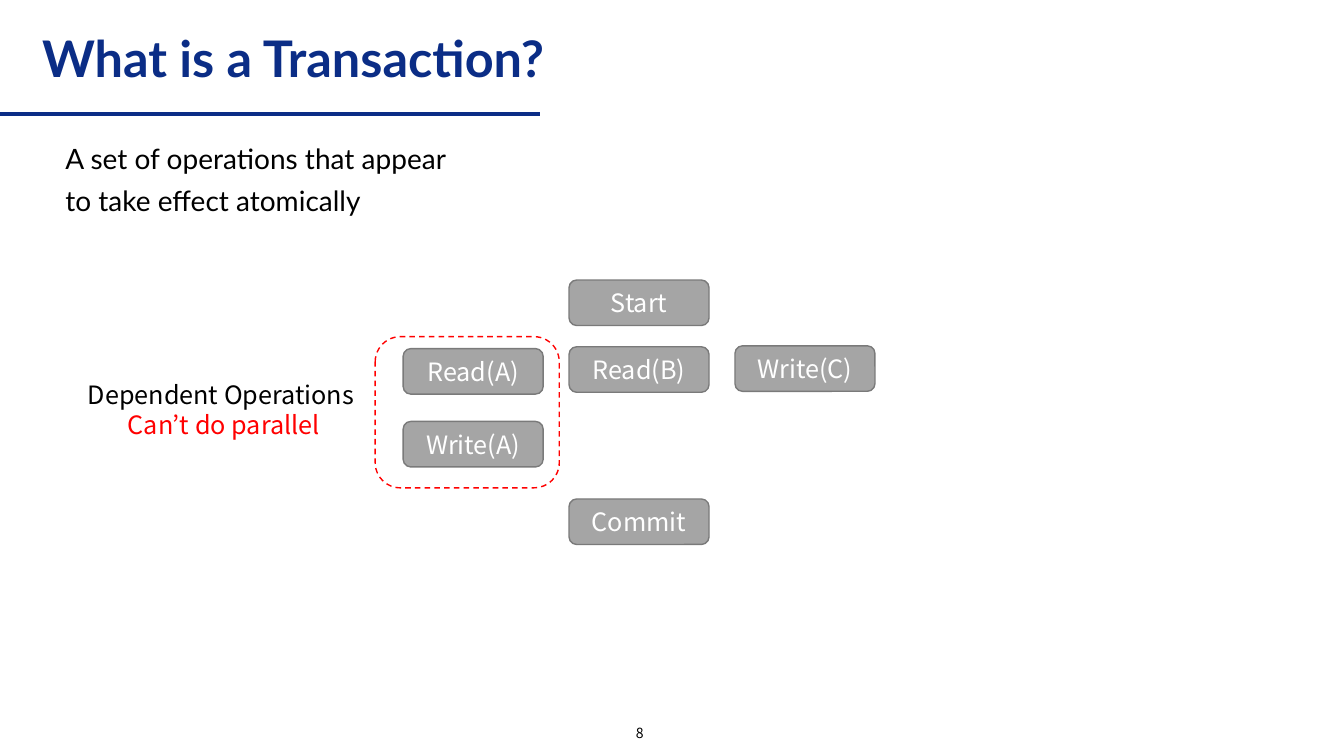
import pptx
import pptx.util
import pptx.oxml.ns
import pptx.dml.color
import pptx.enum.dml
import pptx.enum.shapes
import pptx.enum.text

Pt = pptx.util.Pt
Shape = pptx.enum.shapes.MSO_SHAPE
Align = pptx.enum.text.PP_ALIGN
Anchor = pptx.enum.text.MSO_ANCHOR

COLORS = {
    "navy": "0B2D86",
    "black": "000000",
    "white": "FFFFFF",
    "gray": "A5A5A5",
    "edge": "7A7A7A",
    "red": "FF0000",
}


def color(name):
    return pptx.dml.color.RGBColor.from_string(COLORS[name])


class Deck:
    head = "Lato"
    sans = "Noto Sans CJK KR"

    def __init__(self):
        self.file = pptx.Presentation()
        self.file.slide_width = Pt(960)
        self.file.slide_height = Pt(540)
        self.slide = self.file.slides.add_slide(self.file.slide_layouts[6])

    def fill(self, frame, lines, font, size, align, bold=False, pitch=None, gap=0):
        """Fill a frame with (text, color) lines."""
        for i, (text, tint) in enumerate(lines):
            para = frame.paragraphs[0] if i == 0 else frame.add_paragraph()
            para.text = text
            para.alignment = align
            if pitch:
                para.line_spacing = pitch
            if i and gap:
                para.space_before = Pt(gap)
            para.font.name = font
            para.font.size = Pt(size)
            para.font.bold = bold
            para.font.color.rgb = color(tint)

    def text(self, box, lines, font, size, align=Align.LEFT,
             anchor=Anchor.TOP, wrap=True, **style):
        frame = self.slide.shapes.add_textbox(*map(Pt, box)).text_frame
        frame.word_wrap = wrap
        frame.vertical_anchor = anchor
        self.fill(frame, lines, font, size, align, **style)

    def round(self, box, edge, fill=None):
        shape = self.slide.shapes.add_shape(Shape.ROUNDED_RECTANGLE, *map(Pt, box))
        shape.shadow.inherit = False
        shape.line.color.rgb = color(edge)
        shape.line.width = Pt(1)
        if fill:
            shape.fill.solid()
            shape.fill.fore_color.rgb = color(fill)
        else:
            shape.fill.background()
        return shape

    def step(self, left, top, label):
        shape = self.round((left, top, 100, 32.5), "edge", "gray")
        shape.text_frame.vertical_anchor = Anchor.MIDDLE
        self.fill(shape.text_frame, [(label, "white")], self.sans, 18,
                  Align.CENTER, pitch=Pt(21.6))

    def group(self, box):
        shape = self.round(box, "red")
        shape.line.dash_style = pptx.enum.dml.MSO_LINE.DASH

    def rule(self, left, right, top):
        line = self.slide.shapes.add_connector(
            pptx.enum.shapes.MSO_CONNECTOR.STRAIGHT,
            Pt(left), Pt(top), Pt(right), Pt(top))
        line.line.color.rgb = color("navy")
        line.line.width = Pt(3)
        props = line._element.spPr
        props.append(props.makeelement(pptx.oxml.ns.qn("a:effectLst"), {}))


def main():
    deck = Deck()

    # Heading and page number
    deck.rule(0, 386, 81.5)
    deck.text((23, 17.3, 660, 53.3), [("What is a Transaction?", "navy")],
              deck.head, 36, anchor=Anchor.MIDDLE, bold=True, pitch=0.9)
    deck.text((349, 512, 216, 23), [("8", "black")], deck.sans, 10,
              Align.CENTER, Anchor.MIDDLE)

    # Definition
    deck.text((39.6, 97.2, 874, 401),
              [("A set of operations that appear", "black"),
               ("to take effect atomically", "black")],
              deck.head, 20, gap=6)

    # Operations: column, top, label
    steps = [
        (1, 200, "Start"),
        (1, 247.7, "Read(B)"),
        (2, 247, "Write(C)"),
        (0, 249, "Read(A)"),
        (0, 301, "Write(A)"),
        (1, 356.4, "Commit"),
    ]
    for col, top, label in steps:
        deck.step(288 + 118.5 * col, top, label)

    # Dependent pair
    deck.group((268, 240.5, 131.5, 108))
    deck.text((55.4, 267.1, 209, 51),
              [("Dependent Operations ", "black"), ("Can’t do parallel", "red")],
              deck.sans, 18, Align.CENTER, wrap=False, pitch=Pt(21.6))

    deck.file.save("out.pptx")


if __name__ == "__main__":
    main()
